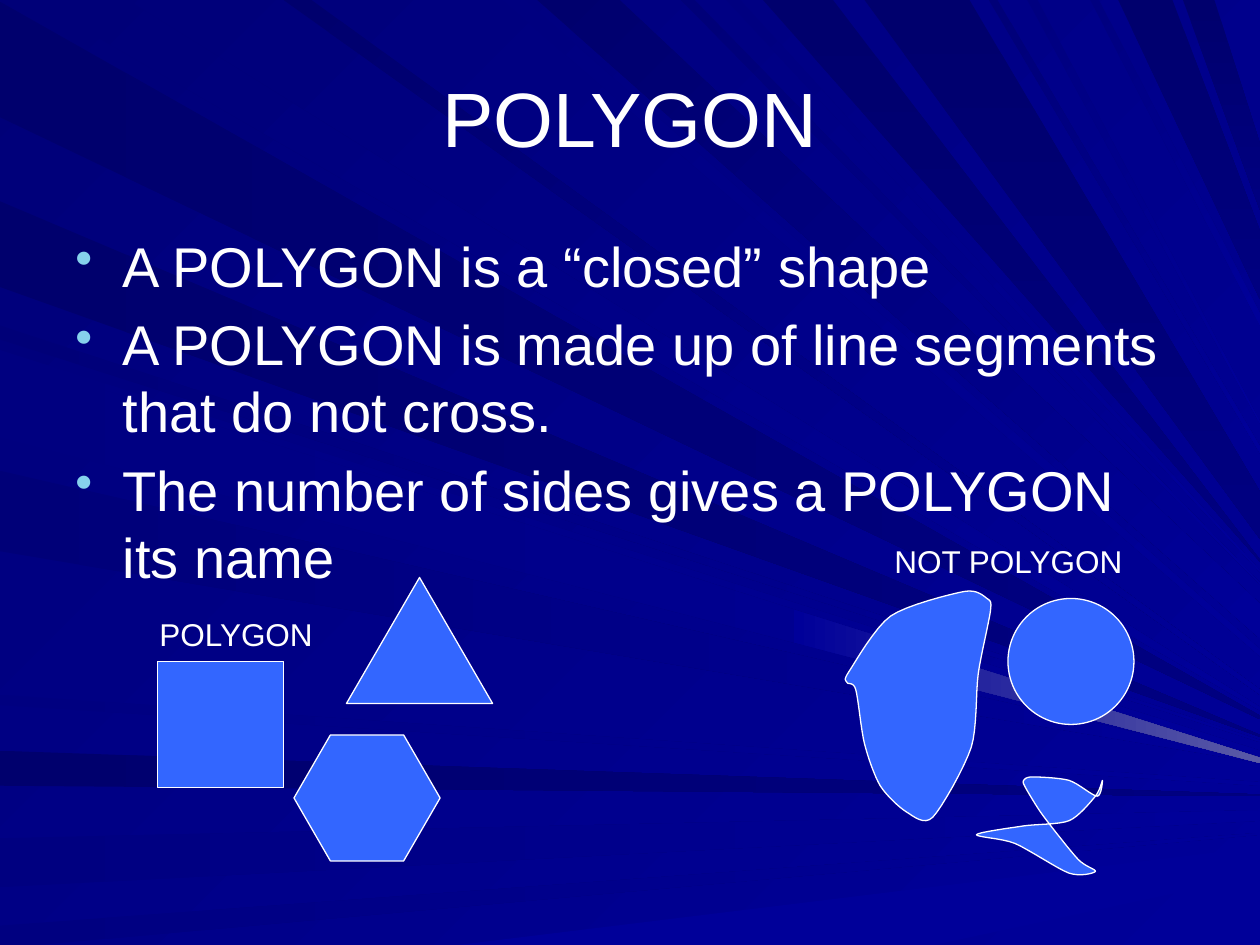
from lxml import etree
from pptx import Presentation
from pptx import util as u
from pptx.dml.color import RGBColor
from pptx.enum import shapes, text
from pptx.oxml.ns import qn

W, H = 720, 540
FONT = "Arial"
WHITE, SHAPE_BLUE, BULLET = "FFFFFF", "3366FF", "86D1EC"
DEEP, NAVY, BRIGHT, GLOW = "00006D", "000080", "000099", "5A5AA6"
MID = "000078"

TITLE = "POLYGON"
POINTS = [
    "A POLYGON is a “closed” shape",
    "A POLYGON is made up of line segments that do not cross.",
    "The number of sides gives a POLYGON its name",
]
LABELS = [("POLYGON", 84, 348, 109.5), ("NOT POLYGON", 504, 306, 151)]

S = shapes.MSO_SHAPE
PRESETS = [  # kind, left, top, width, adjustment
    (S.RECTANGLE, 90, 378, 72, None),
    (S.OVAL, 576, 342, 72, None),
    (S.ISOSCELES_TRIANGLE, 198, 330, 83.5, 0.5),
    (S.HEXAGON, 168, 420, 83.5, 0.289),
]
PRESET_HEIGHT = 72

# Rays run from one edge to the right edge:
# edge, upper and lower start, upper and lower end, first and second colour
RAYS = [
    ("left", 1, 67, 409, 411, DEEP, NAVY),
    ("top", 73, 19, 404, 406, MID, BRIGHT),
    ("left", 429, 449, 454, 455, DEEP, NAVY),
    ("left", 479, 507, 463, 469, NAVY, BRIGHT),
    ("left", 529, 542, 476, 477, NAVY, BRIGHT),
    ("bottom", 262, 534, 484, 500, BRIGHT, BRIGHT),
    ("left", 186, 194, 423, 424, MID, BRIGHT),
    ("left", 115, 164, 420, 421, DEEP, NAVY),
    ("top", 300, 287, 371, 375, NAVY, BRIGHT),
    ("top", 354, 307, 345, 365, DEEP, BRIGHT),
    ("top", 397, 389, 333, 334, MID, BRIGHT),
    ("top", 476, 436, 320, 321, DEEP, NAVY),
    ("top", 670, 639, 132, 171, DEEP, NAVY),
    ("top", 694, 676, 82, 120, DEEP, NAVY),
    ("left", 200, 246, 429, 433, NAVY, BRIGHT),
    ("left", 269, 315, 435, 436, MID, BRIGHT),
    ("left", 397, 403, 447, 449, NAVY, BRIGHT),
    ("top", 178, 162, 394, 397, DEEP, BRIGHT),
    ("top", 423, 415, 326, 327, NAVY, BRIGHT),
    ("top", 554, 494, 281, 308, DEEP, NAVY),
    ("top", 570, 565, 255, 259, MID, BRIGHT),
    ("top", 593, 587, 241, 242, NAVY, BRIGHT),
    ("top", 628, 623, 179, 186, NAVY, BRIGHT),
    ("left", 204, 250, 433, 436, NAVY, BRIGHT),
]
GLOW_FROM = 0.63  # share of the last ray after which it lights up

BLOB = [(485, 384), (509, 352), (551, 338), (564, 342), (566, 349), (559, 385), (555, 427),
        (533, 467), (518, 464), (503, 449), (494, 425), (489, 394), (484, 390)]
CROSSED = [(630, 446), (626, 455), (611, 469), (585, 472), (558, 477), (580, 482), (611, 499),
           (626, 498), (616, 491), (596, 466), (586, 450), (585, 446), (590, 444),
           (611, 446), (627, 455)]


def rgb(value):
    return RGBColor.from_string(value)


def set_gradient(fill, first, second, angle):
    fill.gradient()
    fill.gradient_angle = 360 - angle
    for stop, value in zip(fill.gradient_stops, (first, second)):
        stop.color.rgb = rgb(value)


def add_outline(s, corners):
    start, *rest = [(u.Pt(x), u.Pt(y)) for x, y in corners]
    builder = s.shapes.build_freeform(*start, scale=1.0)
    builder.add_line_segments(rest, close=True)
    sp = builder.convert_to_shape()
    sp.shadow.inherit = False
    return sp


def add_ray(s, corners, first, second, angle):
    ray = add_outline(s, corners)
    set_gradient(ray.fill, first, second, angle)
    ray.line.fill.background()


def ray_corners(edge, upper, lower, end_upper, end_lower):
    def start(v):
        return {"left": (0, v), "top": (v, 0), "bottom": (v, H)}[edge]
    return [start(upper), (W, end_upper), (W, end_lower), start(lower)]


def between(a, b, share):
    return tuple(m + (n - m) * share for m, n in zip(a, b))


def smooth_outline(knots, steps=8, pull=0.4):
    """Join the knots by a closed cubic curve, given as corner points."""
    corners, count = [], len(knots)
    for i in range(count):
        before, a, b, after = (knots[(i + k) % count] for k in (-1, 0, 1, 2))
        for t in (n / steps for n in range(steps)):
            rise = t * t * (3 - 2 * t)
            leave, arrive = t * (1 - t) ** 2 * pull, t * t * (t - 1) * pull
            corners.append(tuple(
                a[k] + (b[k] - a[k]) * rise + (b[k] - before[k]) * leave
                + (after[k] - a[k]) * arrive for k in (0, 1)))
    return corners


def paint(sp):
    sp.shadow.inherit = False
    sp.fill.solid()
    sp.fill.fore_color.rgb = rgb(SHAPE_BLUE)
    sp.line.color.rgb = rgb(WHITE)
    sp.line.width = u.Pt(0.75)


def set_bullet(p):
    pPr = p._p.get_or_add_pPr()
    pPr.set("marL", str(u.Pt(27)))
    pPr.set("indent", str(u.Pt(-27)))
    color = etree.SubElement(pPr, qn("a:buClr"))
    etree.SubElement(color, qn("a:srgbClr"), val=BULLET)
    etree.SubElement(pPr, qn("a:buSzPct"), val="90000")
    etree.SubElement(pPr, qn("a:buChar"), char="•")


def add_text(s, lines, left, top, width, height, size=18, bullet=False, gap=0, inset=3.6,
             align=text.PP_ALIGN.LEFT, anchor=text.MSO_ANCHOR.TOP):
    tf = s.shapes.add_textbox(*map(u.Pt, (left, top, width, height))).text_frame
    tf.word_wrap = True
    tf.vertical_anchor = anchor
    tf.margin_top = u.Pt(inset)
    for i, line in enumerate(lines):
        p = tf.paragraphs[0] if i == 0 else tf.add_paragraph()
        if bullet:
            set_bullet(p)
        p.alignment = align
        if i and gap:
            p.space_before = u.Pt(gap)
        r = p.add_run()
        r.text = line
        r.font.name, r.font.size = FONT, u.Pt(size)
        r.font.color.rgb = rgb(WHITE)


prs = Presentation()
prs.slide_width, prs.slide_height = u.Pt(W), u.Pt(H)
s = prs.slides.add_slide(prs.slide_layouts[6])
set_gradient(s.background.fill, MID, BRIGHT, 45)

for edge, *ends, first, second in RAYS:
    corners = ray_corners(edge, *ends)
    angle = 0 if edge != "top" else 90 if second == NAVY else 45
    add_ray(s, corners, first, second, angle)
upper, end_upper, end_lower, lower = corners
add_ray(s, [between(upper, end_upper, GLOW_FROM), end_upper, end_lower,
            between(lower, end_lower, GLOW_FROM)], BRIGHT, GLOW, 0)

add_text(s, [TITLE], 36, 21.6, 648, 90, size=44,
         align=text.PP_ALIGN.CENTER, anchor=text.MSO_ANCHOR.MIDDLE)
add_text(s, POINTS, 36, 126, 648, 356.4, size=32, bullet=True, gap=6.4, inset=6)

for kind, left, top, width, adjustment in PRESETS:
    sp = s.shapes.add_shape(kind, *map(u.Pt, (left, top, width, PRESET_HEIGHT)))
    if adjustment:
        sp.adjustments[0] = adjustment
    paint(sp)
for knots in (BLOB, CROSSED):
    paint(add_outline(s, smooth_outline(knots)))

for label, left, top, width in LABELS:
    add_text(s, [label], left, top, width, 29)
prs.save("out.pptx")
